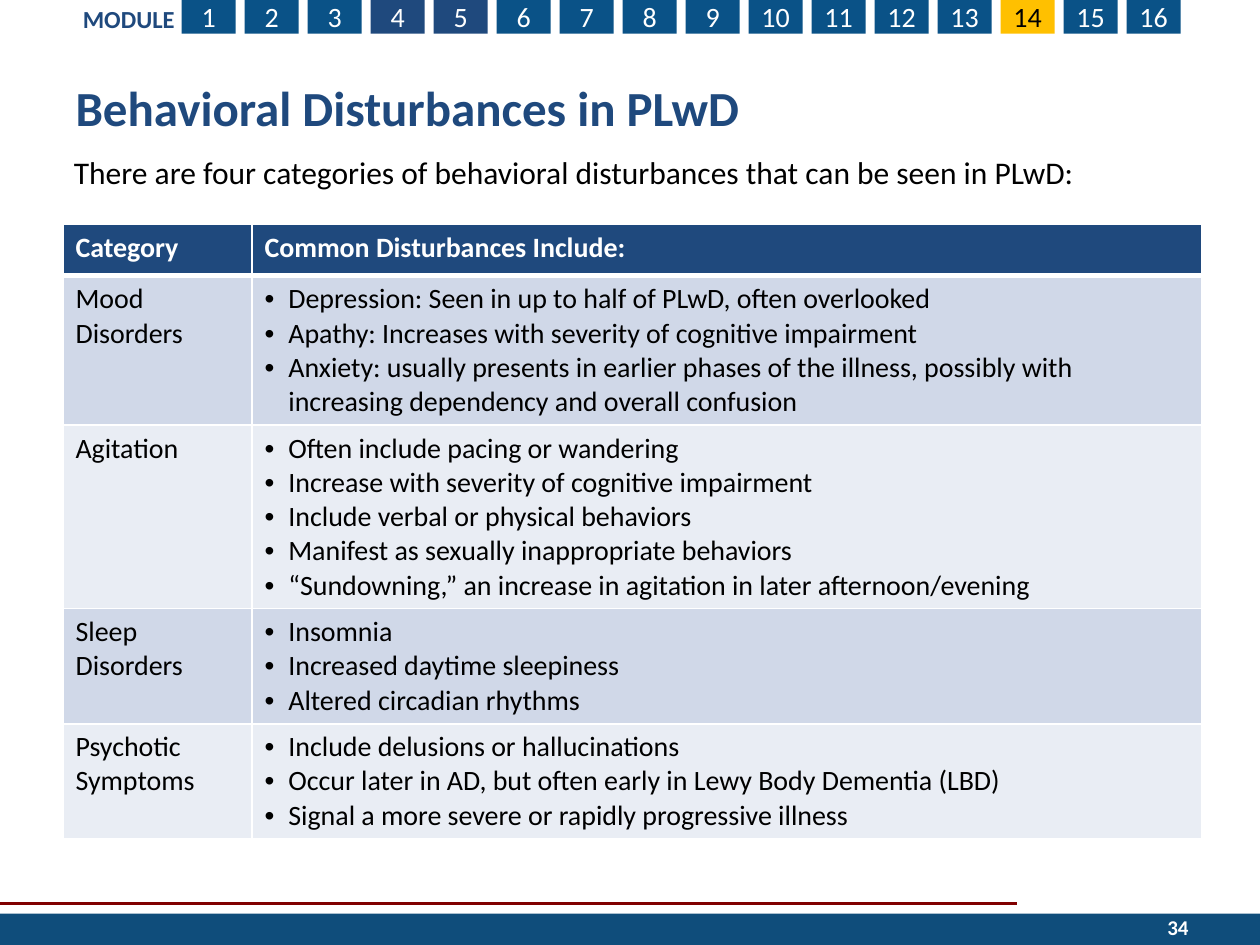
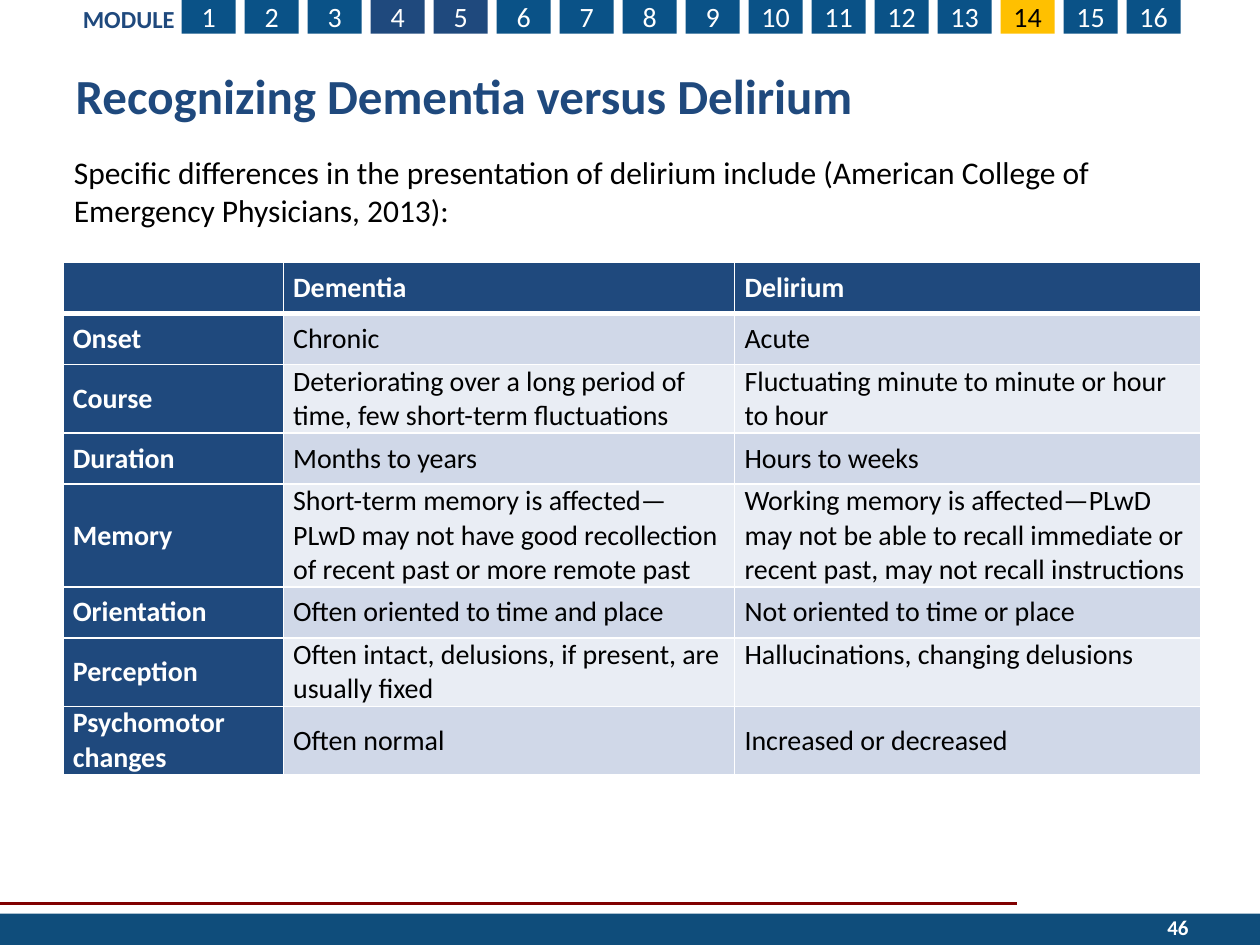
from lxml import etree
from pptx import Presentation
from pptx.dml.color import RGBColor
from pptx.enum.shapes import MSO_CONNECTOR, MSO_SHAPE
from pptx.enum.text import MSO_ANCHOR, PP_ALIGN
from pptx.oxml import parse_xml
from pptx.oxml.ns import nsdecls, qn
from pptx.util import Cm, Pt

LEFT, MID, RIGHT = PP_ALIGN.LEFT, PP_ALIGN.CENTER, PP_ALIGN.RIGHT
TOP, CENTRE = MSO_ANCHOR.TOP, MSO_ANCHOR.MIDDLE
RECT, LINE = MSO_SHAPE.RECTANGLE, MSO_CONNECTOR.STRAIGHT

FACE = "Calibri"
WHITE = RGBColor(0xFF, 0xFF, 0xFF)
BLACK = RGBColor(0, 0, 0)
NAVY = RGBColor(0x1F, 0x49, 0x7D)
BLUE = RGBColor(0x0A, 0x52, 0x87)
BAND = RGBColor(0x0F, 0x4D, 0x7B)
GOLD = RGBColor(0xFF, 0xC0, 0x00)
RED = RGBColor(0x80, 0, 0)
DARK = RGBColor(0xD0, 0xD8, 0xE8)
PALE = RGBColor(0xE9, 0xED, 0xF4)

COUNT, ACTIVE, NAVY_TABS = 16, 14, (4, 5)
EDGE = 1.27  # left edge of title and table, also the tab pitch


class Deck:
    def __init__(self):
        self.show = Presentation()
        self.show.slide_width, self.show.slide_height = Cm(25.4), Cm(19.05)
        self.slide = None

    def style(self, frame, size, color, bold=False, align=LEFT):
        for para in frame.paragraphs:
            para.alignment = align
            for run in para.runs:
                font = run.font
                font.name, font.size, font.bold = FACE, Pt(size), bold
                font.color.rgb = color

    def page(self, title, top, height, number):
        self.slide = self.show.slides.add_slide(self.show.slide_layouts[5])
        # Footer rule, band and page number
        self.rule(0, 18.21, 20.5)
        self.rect(0, 18.42, 25.4, 0.63, BAND)
        self.text(str(number), 18.29, 18.19, 5.92, 1.02, 12, WHITE,
                  True, RIGHT, CENTRE)
        self.tabs()
        # Title
        head = self.slide.shapes.title
        head.left, head.top = Cm(EDGE), Cm(top)
        head.width, head.height = Cm(22.86), Cm(height)
        frame = head.text_frame
        frame.text = title
        frame.vertical_anchor = CENTRE
        self.style(frame, 28, NAVY, True)

    def tabs(self):
        for num in range(1, COUNT + 1):
            fill = NAVY if num in NAVY_TABS else BLUE
            ink = WHITE
            if num == ACTIVE:
                fill, ink = GOLD, BLACK
            tab = self.rect(3.66 + EDGE * (num - 1), -0.03, 1.09, 0.71, fill)
            frame = tab.text_frame
            frame.text = str(num)
            frame.word_wrap = False
            frame.margin_left = frame.margin_right = 0
            frame.vertical_anchor = CENTRE
            self.style(frame, 16, ink, align=MID)
        self.text("MODULE", 1.42, -0.05, 2.57, 0.86, 14, NAVY, True)

    def rect(self, x, y, wide, high, fill):
        box = self.slide.shapes.add_shape(RECT, Cm(x), Cm(y), Cm(wide), Cm(high))
        box.shadow.inherit = False
        box.fill.solid()
        box.fill.fore_color.rgb = fill
        box.line.fill.background()
        return box

    def rule(self, x, y, end):
        line = self.slide.shapes.add_connector(LINE, Cm(x), Cm(y), Cm(end), Cm(y))
        line.line.color.rgb = RED
        line.line.width = Pt(1.5)
        etree.SubElement(line._element.spPr, qn("a:effectLst"))

    def text(self, words, x, y, wide, high, size, color,
             bold=False, align=LEFT, anchor=TOP):
        box = self.slide.shapes.add_textbox(Cm(x), Cm(y), Cm(wide), Cm(high))
        frame = box.text_frame
        frame.word_wrap = True
        frame.text = words
        frame.vertical_anchor = anchor
        self.style(frame, size, color, bold, align)

    def intro(self, words, high):
        self.text(words, 1.24, 2.97, 22.96, high, 18, BLACK)

    def table(self, top, cols, highs, rows, snug=False):
        """Draw a table; snug cells are centred with a navy first column."""
        grid = self.slide.shapes.add_table(
            len(rows), len(cols), Cm(EDGE), Cm(top),
            Cm(sum(cols)), Cm(sum(highs))).table
        grid.first_col = snug
        for col, wide in zip(grid.columns, cols):
            col.width = Cm(wide)
        for row, high in zip(grid.rows, highs):
            row.height = Cm(high)
        for r, row in enumerate(rows):
            for c, words in enumerate(row):
                cell = grid.cell(r, c)
                cell.text = words
                key = r == 0 or (snug and c == 0)
                self.edges(cell, r)
                cell.fill.solid()
                cell.fill.fore_color.rgb = NAVY if key else (DARK if r % 2 else PALE)
                if snug:
                    self.squeeze(cell)
                elif r and c:
                    self.bullets(cell)
                self.style(cell.text_frame, 16, WHITE if key else BLACK, key)
        return grid

    def edges(self, cell, row):
        thick = {"T": 3 if row == 1 else 1, "B": 3 if row == 0 else 1}
        props = cell._tc.get_or_add_tcPr()
        for side in "LRTB":
            props.append(parse_xml(
                f'<a:ln{side} {nsdecls("a")} w="{Pt(thick.get(side, 1))}">'
                f'<a:solidFill><a:srgbClr val="{WHITE}"/></a:solidFill>'
                f'</a:ln{side}>'))

    def squeeze(self, cell):
        cell.vertical_anchor = CENTRE
        cell.margin_left = cell.margin_right = Cm(0.2)
        cell.margin_top = cell.margin_bottom = 0
        for para in cell.text_frame.paragraphs:
            para.space_after = Pt(6)

    def bullets(self, cell):
        for para in cell.text_frame.paragraphs:
            props = para._p.get_or_add_pPr()
            props.set("marL", str(Cm(0.48)))
            props.set("indent", str(Cm(-0.48)))
            font = etree.SubElement(props, qn("a:buFont"))
            font.set("typeface", "Arial")
            mark = etree.SubElement(props, qn("a:buChar"))
            mark.set("char", "•")


MOODS = [
    ("Category", "Common Disturbances Include:"),
    ("Mood Disorders",
     "Depression: Seen in up to half of PLwD, often overlooked\n"
     "Apathy: Increases with severity of cognitive impairment\n"
     "Anxiety: usually presents in earlier phases of the illness, "
     "possibly with increasing dependency and overall confusion"),
    ("Agitation",
     "Often include pacing or wandering\n"
     "Increase with severity of cognitive impairment\n"
     "Include verbal or physical behaviors\n"
     "Manifest as sexually inappropriate behaviors\n"
     "“Sundowning,” an increase in agitation in later afternoon/evening"),
    ("Sleep Disorders",
     "Insomnia\nIncreased daytime sleepiness\nAltered circadian rhythms"),
    ("Psychotic\nSymptoms",
     "Include delusions or hallucinations\n"
     "Occur later in AD, but often early in Lewy Body Dementia (LBD)\n"
     "Signal a more severe or rapidly progressive illness"),
]

SIGNS = [
    ("", "Dementia", "Delirium"),
    ("Onset", "Chronic", "Acute"),
    ("Course",
     "Deteriorating over a long period of time, few short-term fluctuations",
     "Fluctuating minute to minute or hour to hour"),
    ("Duration", "Months to years", "Hours to weeks"),
    ("Memory",
     "Short-term memory is affected—PLwD may not have good recollection "
     "of recent past or more remote past",
     "Working memory is affected—PLwD may not be able to recall immediate "
     "or recent past, may not recall instructions"),
    ("Orientation", "Often oriented to time and place",
     "Not oriented to time or place"),
    ("Perception", "Often intact, delusions, if present, are usually fixed",
     "Hallucinations, changing delusions"),
    ("Psychomotor changes", "Often normal", "Increased or decreased"),
]


def main():
    deck = Deck()

    # Behavioral disturbances
    deck.page("Behavioral Disturbances in PLwD", 1.57, 1.19, 34)
    deck.intro("There are four categories of behavioral disturbances "
               "that can be seen in PLwD:", 1.02)
    deck.table(4.53, (3.81, 19.15), (1.03, 3.01, 3.7, 2.32, 2.32), MOODS)

    # Dementia versus delirium
    deck.page("Recognizing Dementia versus Delirium", 1.07, 1.7, 46)
    deck.intro("Specific differences in the presentation of delirium include "
               "(American College of Emergency Physicians, 2013):", 1.8)
    one, two, three = 1.03, 1.38, 2.07
    grid = deck.table(5.29, (4.44, 9.1, 9.4),
                      (one, one, two, one, three, one, two, two), SIGNS, True)
    for col in (1, 2):
        grid.cell(6, col).vertical_anchor = TOP

    deck.show.save("out.pptx")


if __name__ == "__main__":
    main()
